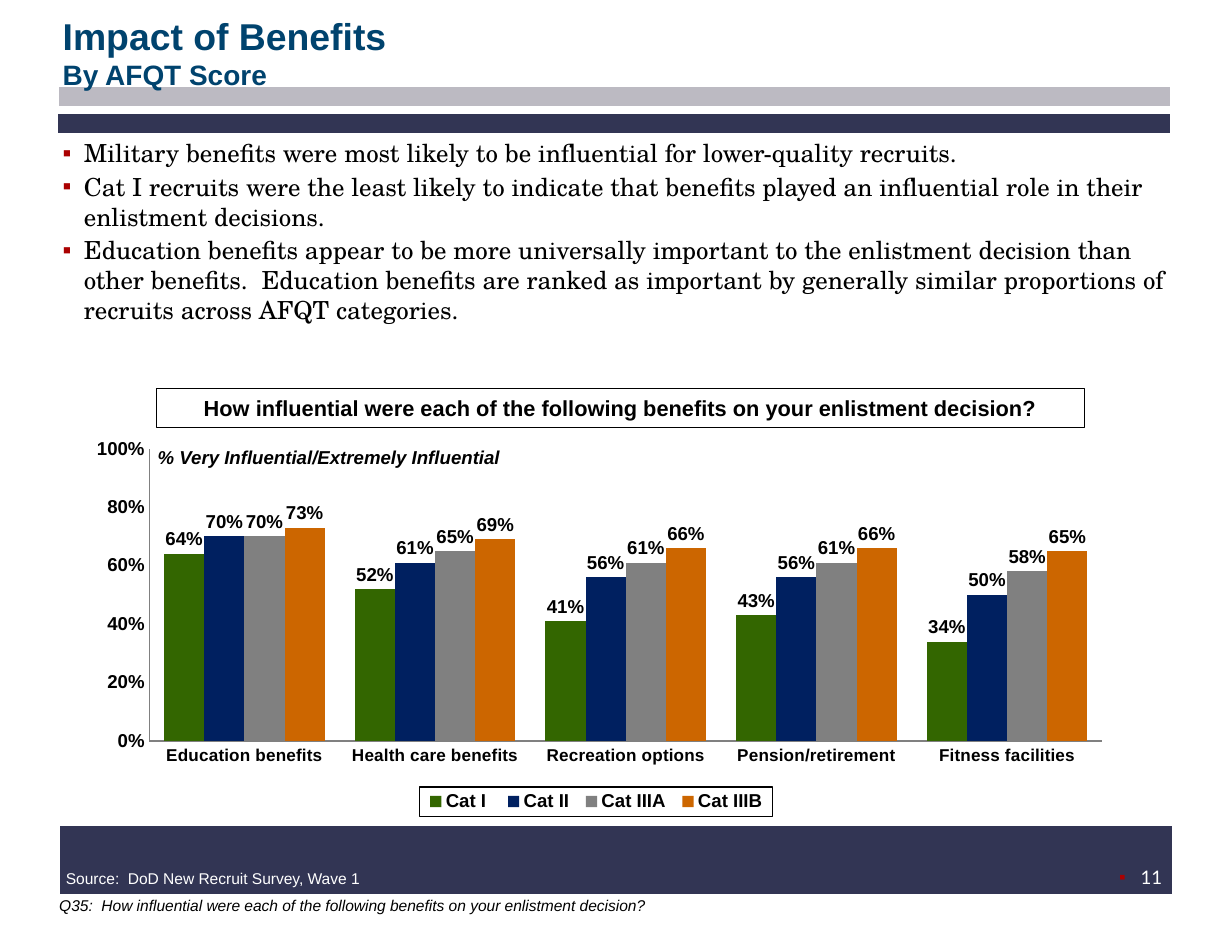
"""Build the slide on the impact of benefits by AFQT score."""
from dataclasses import dataclass

from lxml.etree import SubElement as Sub
from pptx import Presentation
from pptx.chart.data import CategoryChartData as Data
from pptx.dml.color import RGBColor as Rgb
from pptx.enum.chart import XL_CHART_TYPE as Kind
from pptx.enum.chart import XL_LABEL_POSITION as Spot
from pptx.enum.chart import XL_LEGEND_POSITION as Side
from pptx.enum.chart import XL_TICK_MARK as Tick
from pptx.enum.shapes import MSO_CONNECTOR as Conn
from pptx.enum.shapes import MSO_SHAPE as Form
from pptx.enum.text import MSO_ANCHOR as Anchor
from pptx.enum.text import PP_ALIGN as Align
from pptx.oxml import parse_xml as parsed
from pptx.oxml.ns import nsdecls, qn
from pptx.util import Inches, Pt


@dataclass(frozen=True)
class Theme:
    ink: str = "000000"
    white: str = "FFFFFF"
    navy: str = "323554"
    mist: str = "BCBAC2"
    blue: str = "00436E"
    red: str = "AB0101"
    axis: str = "808080"
    sans: str = "Arial"
    serif: str = "TeX Gyre Schola"
    num: str = "Lato"
    head: int = 24
    sub: int = 18
    body: int = 16
    ask: int = 14
    mid: int = 12
    cat: int = 11
    note: int = 10


T = Theme()
COLS, ROWS = 110, 85
WIDE, HIGH = Inches(11), Inches(8.5)
HANG = 1.9

TITLE = [("Impact of Benefits", T.head), ("By AFQT Score", T.sub)]
POINTS = [
    "Military benefits were most likely to be influential for lower-quality recruits.",
    "Cat I recruits were the least likely to indicate that benefits played an "
    "influential role in their enlistment decisions.",
    "Education benefits appear to be more universally important to the enlistment "
    "decision than other benefits.  Education benefits are ranked as important by "
    "generally similar proportions of recruits across AFQT categories.",
]
ASK = "How influential were each of the following benefits on your enlistment decision?"
SCALE = "% Very Influential/Extremely Influential"
SOURCE = "Source:  DoD New Recruit Survey, Wave 1"
NOTE = "Q35:  " + ASK
PAGE = "11"
RULES = [
    (5.3, 104.5, 8.6, 12, T.mist),
    (5.4, 104.6, 76.8, 44, T.navy),
    (5.2, 104.5, 11, 12, T.navy),
]
CATS = ["Education benefits", "Health care benefits", "Recreation options",
        "Pension/retirement", "Fitness facilities"]
SERIES = [
    ("Cat I ", "336600", [0.64, 0.52, 0.41, 0.43, 0.34]),
    ("Cat II", "002060", [0.7, 0.61, 0.56, 0.56, 0.5]),
    ("Cat IIIA", "808080", [0.7, 0.65, 0.61, 0.61, 0.58]),
    ("Cat IIIB", "CC6600", [0.73, 0.69, 0.66, 0.66, 0.65]),
]
PLOT = (0.08, 0.09, 0.81, 0.7)
KEY = (0.31, 0.9, 0.3, 0.07)


def across(n):
    return round(WIDE * n / COLS)


def down(n):
    return round(HIGH * n / ROWS)


def place(x, y, w, h):
    return across(x), down(y), across(w), down(h)


def style(font, size, face=T.sans, tint=T.ink, bold=False, slant=False):
    font.size, font.name = Pt(size), face
    font.bold, font.italic = bold, slant
    font.color.rgb = Rgb.from_string(tint)


def write(slide, text, at, size=T.note, ins=(1, 0.5), align=Align.LEFT,
          mid=False, dot=False, left=0, gap=0, frame=False, **look):
    """Add text, given as a string or a list of (string, size) lines."""
    if frame:
        box = slide.shapes.add_shape(Form.RECTANGLE, *place(*at))
        box.shadow.inherit = False
        box.fill.background()
        box.line.color.rgb = Rgb.from_string(T.ink)
        box.line.width = Pt(0.75)
    else:
        box = slide.shapes.add_textbox(*place(*at))
    body = box.text_frame
    body.word_wrap = True
    body.vertical_anchor = Anchor.MIDDLE if mid else Anchor.TOP
    body.margin_left = body.margin_right = across(ins[0])
    body.margin_top = body.margin_bottom = down(ins[1])
    lines = [(text, size)] if isinstance(text, str) else text
    for i, (line, pts) in enumerate(lines):
        para = body.paragraphs[0] if i == 0 else body.add_paragraph()
        para.alignment = align
        para.space_before = Pt(gap if i else 0)
        props = para._p.get_or_add_pPr()
        props.set("marL", str(across(HANG if dot else left)))
        props.set("indent", str(across(-HANG if dot else 0)))
        if dot:
            Sub(Sub(props, qn("a:buClr")), qn("a:srgbClr")).set("val", T.red)
            Sub(props, qn("a:buFont")).set("typeface", T.sans)
            Sub(props, qn("a:buChar")).set("char", "▪")
        run = para.add_run()
        run.text = line
        style(run.font, pts, **look)


def rule(slide, x, end, y, pts, tint):
    line = slide.shapes.add_connector(
        Conn.STRAIGHT, across(x), down(y), across(end), down(y))
    line.line.width = Pt(pts)
    line.line.color.rgb = Rgb.from_string(tint)
    Sub(line._element.spPr, qn("a:effectLst"))


def layout(area, inner=False):
    kind = '<c:layoutTarget val="inner"/>' if inner else ""
    modes = "".join(f'<c:{k}Mode val="edge"/>' for k in "xy")
    sizes = "".join(f'<c:{k} val="{v}"/>' for k, v in zip("xywh", area))
    return parsed(f'<c:layout {nsdecls("c")}><c:manualLayout>{kind}{modes}{sizes}'
                  '</c:manualLayout></c:layout>')


def graph(slide, at):
    data = Data(number_format="0%")
    data.categories = CATS
    for name, _, vals in SERIES:
        data.add_series(name, vals)
    chart = slide.shapes.add_chart(Kind.COLUMN_CLUSTERED, *place(*at), data).chart
    chart.has_title = False
    style(chart.font, T.mid, bold=True)
    plot = chart.plots[0]
    plot.gap_width, plot.overlap, plot.vary_by_categories = 75, 0, False
    for item, (_, tint, _) in zip(plot.series, SERIES):
        item.format.fill.solid()
        item.format.fill.fore_color.rgb = Rgb.from_string(tint)
        tags = item.data_labels
        tags.show_value, tags.position = True, Spot.OUTSIDE_END
        tags.number_format, tags.number_format_is_linked = "0%", False
        style(tags.font, T.mid, bold=True)
    for axis, size in ((chart.category_axis, T.cat), (chart.value_axis, T.mid)):
        axis.major_tick_mark = axis.minor_tick_mark = Tick.NONE
        axis.has_major_gridlines = False
        axis.format.line.color.rgb = Rgb.from_string(T.axis)
        style(axis.tick_labels.font, size, bold=True)
    scale = chart.value_axis
    scale.minimum_scale, scale.maximum_scale, scale.major_unit = 0, 1, 0.2
    scale.tick_labels.number_format = "0%"
    scale.tick_labels.number_format_is_linked = False
    chart.has_legend = True
    key = chart.legend
    key.position, key.include_in_layout = Side.BOTTOM, False
    style(key.font, T.mid, bold=True)
    node = key._element
    node.find(qn("c:legendPos")).addnext(layout(KEY))
    node.find(qn("c:txPr")).addprevious(parsed(
        f'<c:spPr {nsdecls("c", "a")}><a:ln w="9525"><a:solidFill>'
        f'<a:srgbClr val="{T.ink}"/></a:solidFill></a:ln></c:spPr>'))
    area = chart._chartSpace.chart.plotArea
    for old in area.findall(qn("c:layout")):
        area.remove(old)
    area.insert(0, layout(PLOT, inner=True))


def main():
    deck = Presentation()
    deck.slide_width, deck.slide_height = WIDE, HIGH
    slide = deck.slides.add_slide(deck.slide_layouts[6])
    for item in RULES:
        rule(slide, *item)
    graph(slide, (4.9, 36.7, 105.1, 37.3))
    write(slide, PAGE, (96, 76.8, 11.7, 5.8), T.mid, align=Align.CENTER,
          dot=True, face=T.num, tint=T.white)
    write(slide, [(line, T.body) for line in POINTS], (5, 11.7, 100, 14.2),
          ins=(0.6, 0.6), dot=True, gap=2.4, face=T.serif)
    write(slide, SOURCE, (4.9, 77.1, 55, 2.7), tint=T.white)
    write(slide, TITLE, (5, 1.8, 100.5, 5.7), ins=(0.6, 0.6), mid=True,
          tint=T.blue, bold=True)
    write(slide, ASK, (14, 34.7, 82.8, 3.5), T.ask, ins=(1.1, 0.6),
          align=Align.CENTER, mid=True, frame=True, bold=True)
    write(slide, SCALE, (13.1, 39.3, 38.5, 3), T.mid, bold=True, slant=True)
    write(slide, NOTE, (2.4, 79.5, 102.1, 2.7), left=HANG, slant=True)
    deck.save("out.pptx")


if __name__ == "__main__":
    main()
